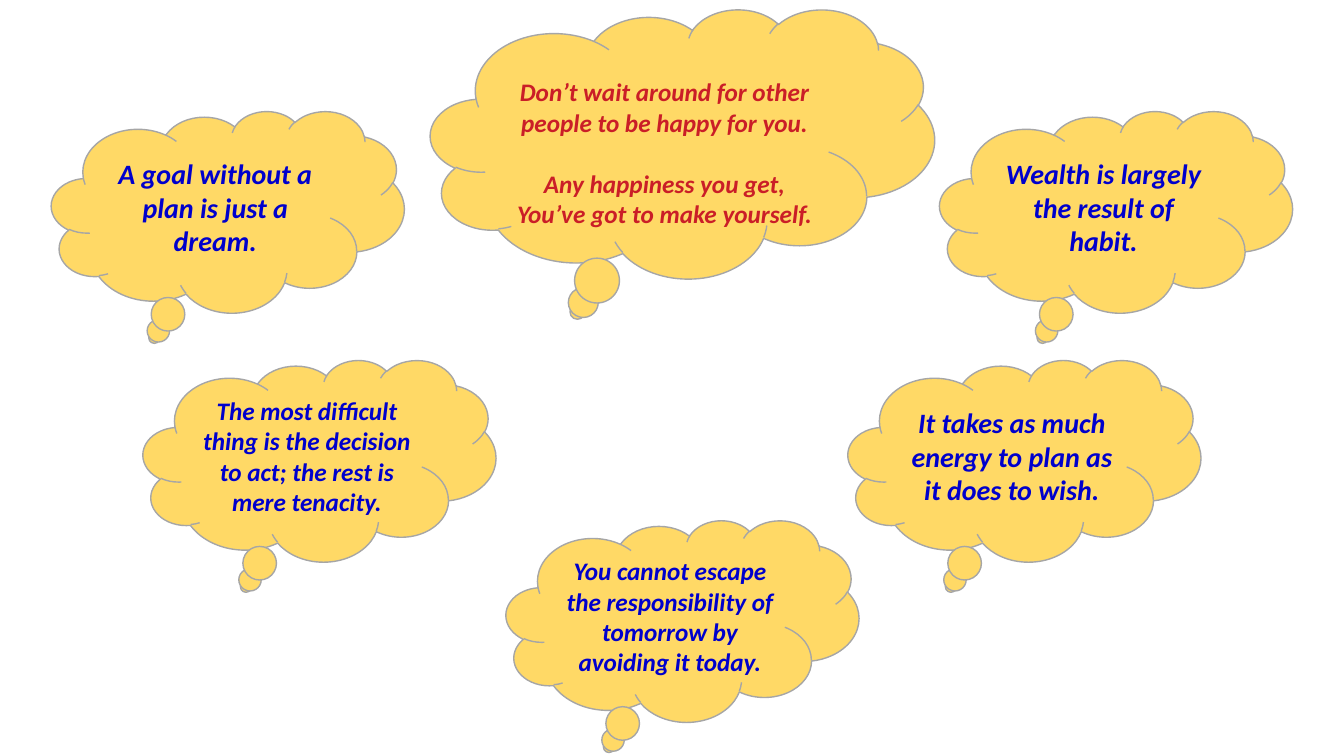
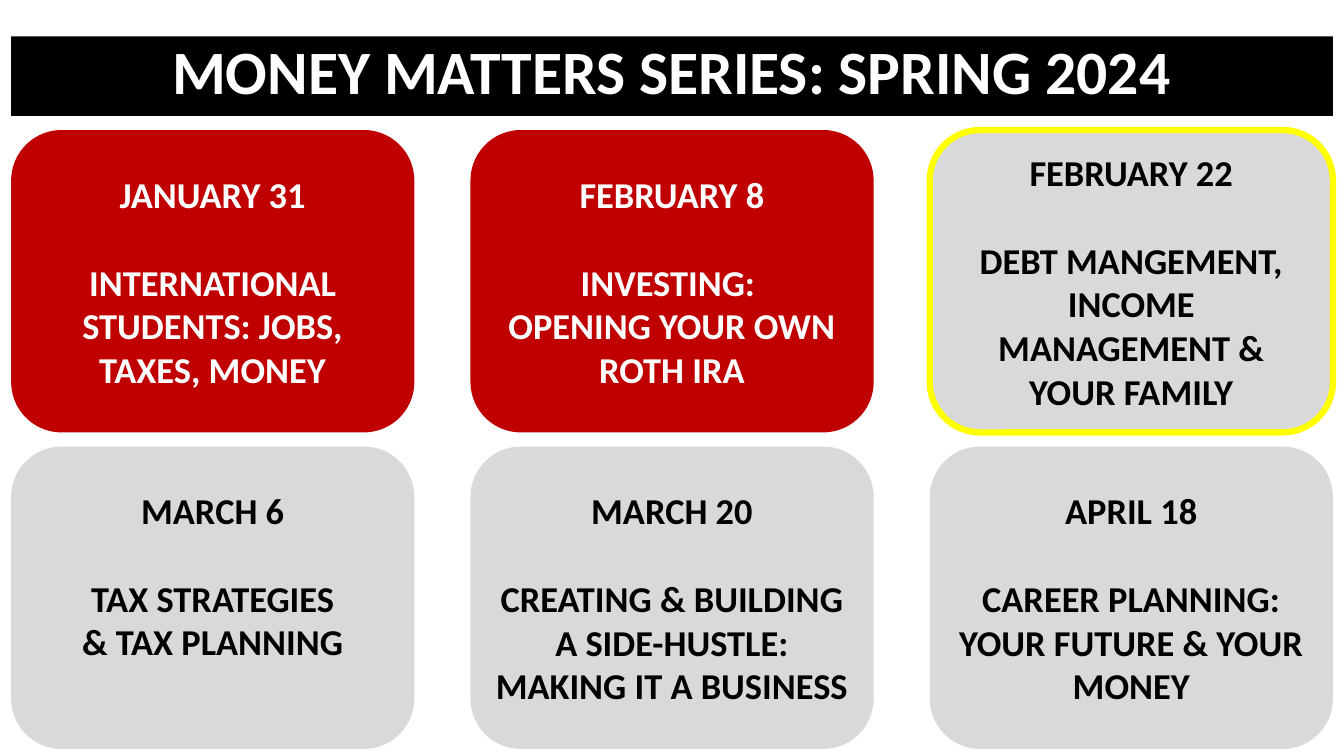
from pptx import Presentation
from pptx import util as u
from pptx.dml.color import RGBColor
from pptx.enum import shapes, text

COLORS = {"cloud": "FFD966", "outline": "A6A6A6", "quote": "0000CC",
          "accent": "CA1E27", "past": "C00000", "next": "D9D9D9",
          "highlight": "FFFF00", "black": "000000", "white": "FFFFFF"}
FONT = "Calibri"
TITLE_ONLY, BLANK = 5, 6


def rgb(name):
    return RGBColor.from_string(COLORS[name])


def write(tf, paragraphs, size, color, bold=True, italic=False, gap=0,
          anchor=text.MSO_ANCHOR.MIDDLE, spacing=None, top=0.05, bottom=0.05):
    """Fill a text frame; gap is the space between paragraphs in points."""
    tf.word_wrap = True
    tf.auto_size = text.MSO_AUTO_SIZE.NONE
    tf.vertical_anchor = anchor
    tf.margin_top, tf.margin_bottom = u.Inches(top), u.Inches(bottom)
    for i, line in enumerate(paragraphs):
        p = tf.add_paragraph() if i else tf.paragraphs[0]
        p.text = line
        p.alignment = text.PP_ALIGN.CENTER
        p.space_before = u.Pt(gap if i else 0)
        if spacing:
            p.line_spacing = spacing
        for r in p.runs:
            r.font.name, r.font.size = FONT, u.Pt(size)
            r.font.bold, r.font.italic = bold, italic
            r.font.color.rgb = rgb(color)


class Deck:
    """Shared style and current slide; lengths are percent of the slide."""
    left, width = 0.83, 98.35
    title_top, title_height = 4.8, 10.53
    card_width, card_height = 30, 40
    cards_top, row_gap, columns = 17.2, 1.87, 3

    def __init__(self):
        self.prs = Presentation()
        self.prs.slide_width = u.Inches(13.33)
        self.prs.slide_height = u.Inches(7.5)

    def new_slide(self, layout):
        self.slide = self.prs.slides.add_slide(self.prs.slide_layouts[layout])

    def box(self, x, y, w, h):
        sw, sh = self.prs.slide_width, self.prs.slide_height
        return [u.Emu(round(share * side / 100))
                for share, side in ((x, sw), (y, sh), (w, sw), (h, sh))]

    def shape(self, kind, area, fill, line=None, weight=1):
        sp = self.slide.shapes.add_shape(kind, *self.box(*area))
        sp.shadow.inherit = False
        sp.fill.solid()
        sp.fill.fore_color.rgb = rgb(fill)
        if line:
            sp.line.color.rgb = rgb(line)
            sp.line.width = u.Pt(weight)
        else:
            sp.line.fill.background()
        return sp

    def title(self, words):
        sp = self.slide.shapes.title
        sp.left, sp.top, sp.width, sp.height = self.box(
            self.left, self.title_top, self.width, self.title_height)
        sp.fill.solid()
        sp.fill.fore_color.rgb = rgb("black")
        write(sp.text_frame, [words], 44, "white", spacing=0.9,
              anchor=text.MSO_ANCHOR.TOP)

    def cloud(self, x, y, paragraphs, size=20, color="quote",
              w=26.25, h=26.67, **fmt):
        sp = self.shape(shapes.MSO_SHAPE.CLOUD_CALLOUT, (x, y, w, h),
                        "cloud", "outline")
        write(sp.text_frame, paragraphs, size, color, italic=True, **fmt)

    def card(self, col, row, date, topic, fill="next", color="black",
             line=None, **fmt):
        col_step = (self.width - self.card_width) / (self.columns - 1)
        row_step = self.card_height + self.row_gap
        area = (self.left + col * col_step, self.cards_top + row * row_step,
                self.card_width, self.card_height)
        sp = self.shape(shapes.MSO_SHAPE.ROUNDED_RECTANGLE, area, fill, line, 4.5)
        write(sp.text_frame, [date, topic], 26, color, gap=31.7, **fmt)


def main():
    deck = Deck()

    # Quotes in thought clouds
    deck.new_slide(BLANK)
    for x, y, quote, size in (
            (3.83, 14.67, "A goal without a plan is just a dream.", 20),
            (10.65, 47.6, "The most difficult thing is the decision to act; "
                          "the rest is mere tenacity.", 18),
            (69.92, 14.67, "Wealth is largely the result of habit.", 20),
            (63.1, 47.6, "It takes as much energy to plan as it does to wish.", 20),
            (37.66, 68.8, "You cannot escape the responsibility of tomorrow "
                          "by avoiding it today.", 18)):
        deck.cloud(x, y, [quote], size)
    deck.cloud(32.03, 1.2,
               ["Don’t wait around for other people to be happy for you.",
                "Any happiness you get,\vYou’ve got to make yourself."],
               18, "accent", w=37.5, h=35.6, gap=22, top=0.35)

    # Series schedule
    deck.new_slide(TITLE_ONLY)
    deck.title("MONEY MATTERS SERIES: SPRING 2024")
    past = {"fill": "past", "color": "white"}
    events = (
        ("JANUARY 31", "INTERNATIONAL STUDENTS: JOBS, TAXES, MONEY", past),
        ("FEBRUARY 8", "INVESTING: \vOPENING YOUR OWN ROTH IRA", past),
        ("FEBRUARY 22", "DEBT MANGEMENT, INCOME MANAGEMENT & YOUR FAMILY",
         {"line": "highlight"}),
        ("MARCH 6", "TAX STRATEGIES\v& TAX PLANNING", {"bottom": 0.49}),
        ("MARCH 20", "CREATING & BUILDING A SIDE-HUSTLE: MAKING IT A BUSINESS", {}),
        ("APRIL 18", "CAREER PLANNING: YOUR FUTURE & YOUR MONEY", {}))
    for i, (date, topic, style) in enumerate(events):
        row, col = divmod(i, deck.columns)
        deck.card(col, row, date, topic, **style)

    deck.prs.save("out.pptx")


if __name__ == "__main__":
    main()
